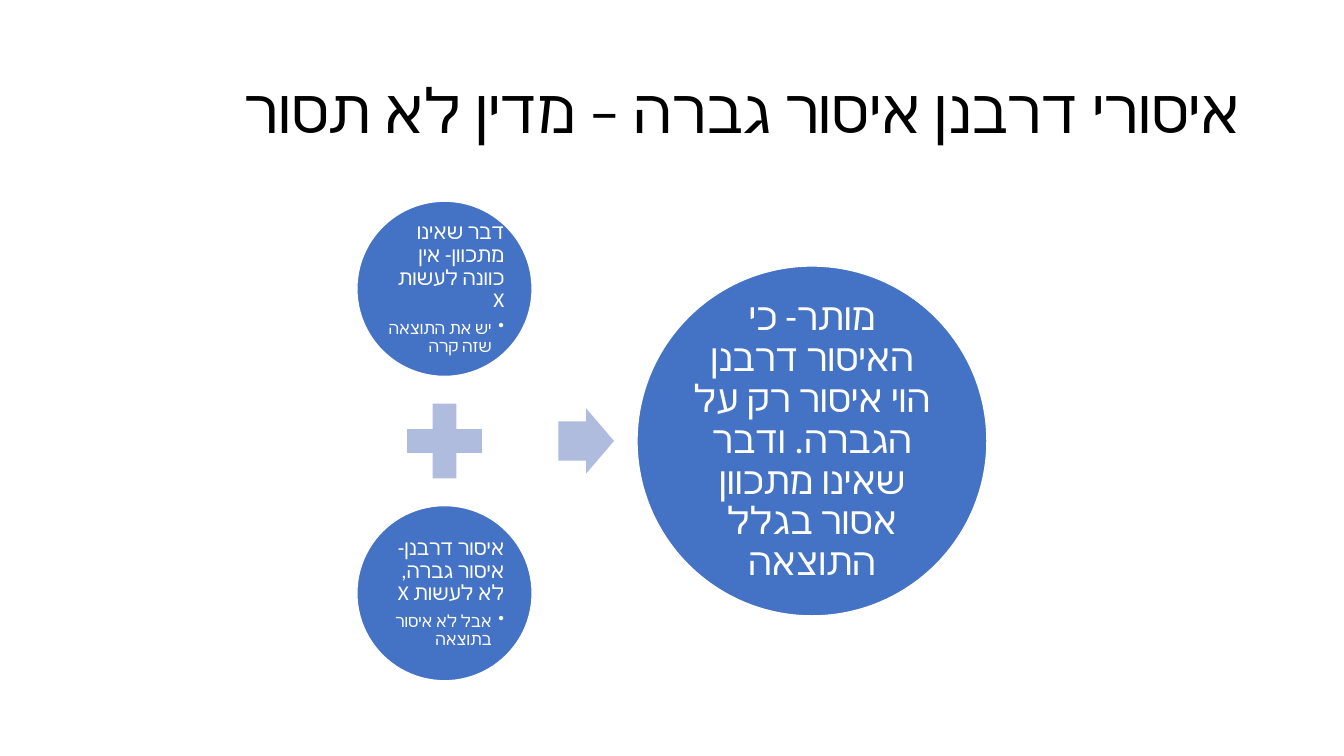
from lxml import etree
from pptx import Presentation
from pptx.dml.color import RGBColor
from pptx.enum.shapes import MSO_SHAPE
from pptx.enum.text import MSO_ANCHOR, PP_ALIGN
from pptx.oxml.ns import qn
from pptx.util import Pt

CIRCLE, PLUS, ARROW = MSO_SHAPE.OVAL, MSO_SHAPE.MATH_PLUS, MSO_SHAPE.RIGHT_ARROW
RIGHT, CENTER = PP_ALIGN.RIGHT, PP_ALIGN.CENTER
MIDDLE = MSO_ANCHOR.MIDDLE
FONT = "Calibri"
COLORS = {"circle": "4472C4", "operator": "B0BCDE", "light": "FFFFFF", "dark": "000000"}


def write(paragraph, text, size, color="light", align=RIGHT, after=0, bullet=False):
    """Fill a right-to-left paragraph; after is a share of the text size."""
    paragraph.alignment = align
    paragraph.line_spacing = 0.9
    paragraph.space_before = Pt(0)
    paragraph.space_after = Pt(round(size * after, 2))
    properties = paragraph._p.get_or_add_pPr()
    properties.set("rtl", "1")
    if bullet:
        paragraph.level = 1
        properties.set("marL", str(Pt(9)))
        properties.set("indent", str(-Pt(9)))
        etree.SubElement(properties, qn("a:buChar"), char="•")
    run = paragraph.add_run()
    run.text = text
    run.font.size = Pt(size)
    run.font.name = FONT
    run.font.color.rgb = RGBColor.from_string(COLORS[color])
    etree.SubElement(run._r.get_or_add_rPr(), qn("a:cs"), typeface=FONT)


def add_centered(kind, center_x, center_y, width, height, color, inset=0):
    """Place a filled shape by its centre; circles get a white outline."""
    shape = slide.shapes.add_shape(kind, Pt(center_x - width / 2), Pt(center_y - height / 2),
                                   Pt(width), Pt(height))
    shape.shadow.inherit = False
    shape.fill.solid()
    shape.fill.fore_color.rgb = RGBColor.from_string(COLORS[color])
    if kind == CIRCLE:
        shape.line.color.rgb = RGBColor.from_string(COLORS["light"])
        shape.line.width = Pt(1)
    else:
        shape.line.fill.background()
    frame = shape.text_frame
    frame.word_wrap = True
    frame.vertical_anchor = MIDDLE
    frame.margin_left = frame.margin_right = frame.margin_top = frame.margin_bottom = Pt(inset)
    return shape


presentation = Presentation()
presentation.slide_width, presentation.slide_height = Pt(960), Pt(540)
slide = presentation.slides.add_slide(presentation.slide_layouts[5])

# Title
title = slide.shapes.title
title.left, title.top, title.width, title.height = Pt(66), Pt(28.75), Pt(828), Pt(104.4)
title.text_frame.vertical_anchor = MIDDLE
write(title.text_frame.paragraphs[0], "איסורי דרבנן איסור גברה – מדין לא תסור", 44, color="dark")

# Two premises, stacked evenly around the middle axis
AXIS_Y, PREMISE_X, PREMISE_STEP, PREMISE_SIZE = 315, 317.5, 108.7, 125.2
premises = [
    (-1, "דבר שאינו מתכוון- אין כוונה לעשות X", "יש את התוצאה שזה קרה"),
    (1, "איסור דרבנן- איסור גברה, לא לעשות X ", "אבל לא איסור בתוצאה"),
]
for side, claim, detail in premises:
    premise = add_centered(CIRCLE, PREMISE_X, AXIS_Y + side * PREMISE_STEP,
                           PREMISE_SIZE, PREMISE_SIZE, "circle", inset=1.5)
    write(premise.text_frame.paragraphs[0], claim, 15, after=0.35)
    write(premise.text_frame.add_paragraph(), detail, 12, after=0.15, bullet=True)

# Plus between the premises, arrow towards the conclusion
add_centered(PLUS, PREMISE_X, AXIS_Y, 72.6, 72.6, "operator")
arrow = add_centered(ARROW, 418.7, AXIS_Y, 39.8, 46.6, "operator")
arrow.adjustments[0] = 0.6

# Conclusion
conclusion = add_centered(CIRCLE, 580, AXIS_Y, 250, 250, "circle", inset=2.7)
write(conclusion.text_frame.paragraphs[0],
      "מותר- כי האיסור דרבנן הוי איסור רק על הגברה. ודבר שאינו מתכוון אסור בגלל התוצאה",
      27, align=CENTER, after=0.35)

presentation.save("out.pptx")
